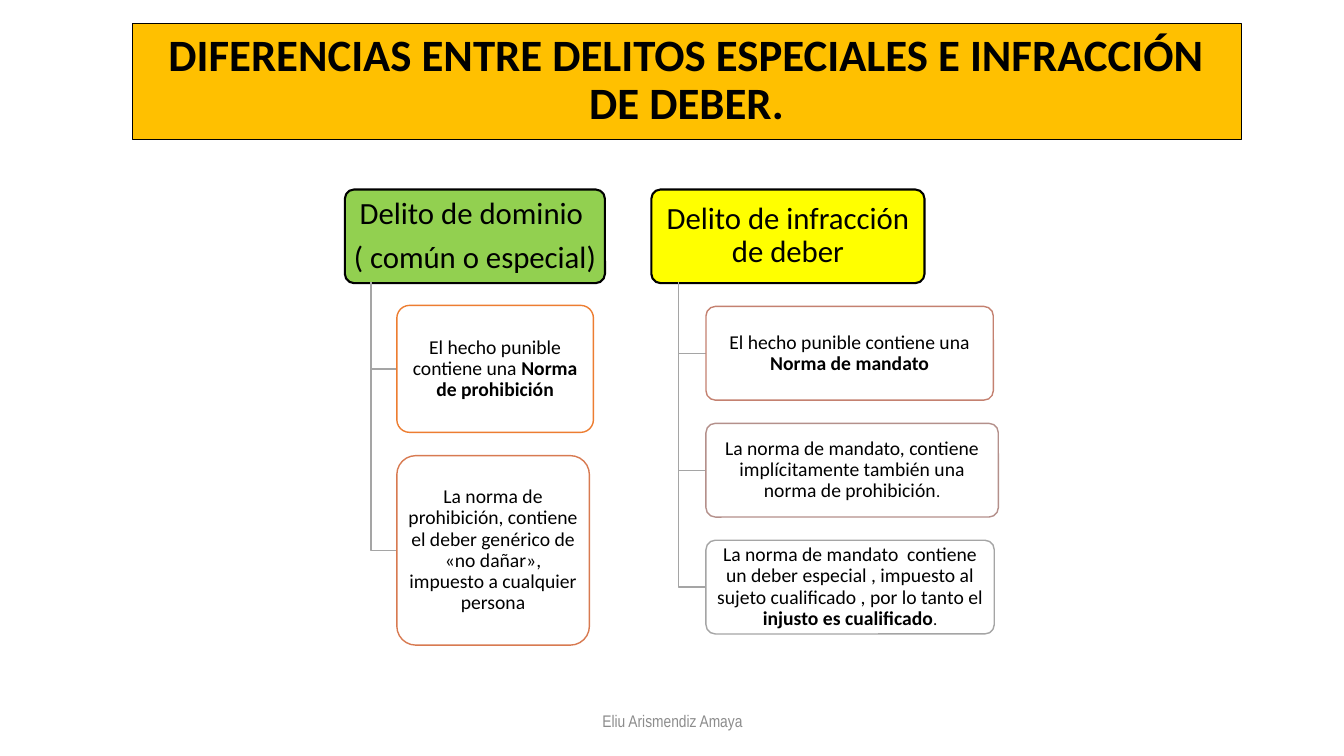
from dataclasses import dataclass

from lxml.etree import SubElement
from pptx import Presentation
from pptx.dml.color import RGBColor as Rgb
from pptx.enum.shapes import MSO_SHAPE as Shape
from pptx.enum.text import MSO_ANCHOR as Anchor, MSO_AUTO_SIZE as Fit, PP_ALIGN as Align
from pptx.oxml.ns import qn
from pptx.util import Inches, Pt


@dataclass(frozen=True)
class Theme:
    font: str = "Calibri"
    narrow: str = "Arial Narrow"
    ink: str = "000000"
    white: str = "FFFFFF"
    grey: str = "A5A5A5"
    muted: str = "8C8C8C"
    amber: str = "FFC000"
    green: str = "92D050"
    yellow: str = "FFFF00"
    orange: str = "ED7D31"
    coral: str = "D87A51"
    rose: str = "C48170"
    mauve: str = "B4908B"
    title: int = 32
    head: int = 22
    body: int = 14
    small: int = 12


THEME = Theme()
BOLD = {"bold": True}
DOT = (".", {"size": THEME.small})


def write(frame, paras, size, font=THEME.font, color=THEME.ink, bold=False,
          lead=0.9, after=0.0, pad=None):
    """Fill a frame; each paragraph is a list of (text, overrides) runs."""
    frame.word_wrap = True
    frame.auto_size = Fit.NONE
    frame.vertical_anchor = Anchor.MIDDLE
    if pad:
        frame.margin_left = frame.margin_right = Inches(pad[0])
        frame.margin_top = frame.margin_bottom = Inches(pad[1])
    for i, runs in enumerate(paras):
        para = frame.add_paragraph() if i else frame.paragraphs[0]
        para.alignment = Align.CENTER
        para.line_spacing = lead
        para.space_before = Pt(0)
        para.space_after = Pt(after * size)
        for text, own in runs:
            run = para.add_run()
            run.text = text
            run.font.name = font
            run.font.size = Pt(own.get("size", size))
            run.font.bold = own.get("bold", bold)
            run.font.color.rgb = Rgb.from_string(color)


class Deck:
    gap = 0.23
    top = 1.88
    base = 2.8

    def __init__(self, theme):
        self.theme = theme
        self.prs = Presentation()
        self.prs.slide_width = Inches(13.33)
        self.prs.slide_height = Inches(7.5)
        self.slide = self.prs.slides.add_slide(self.prs.slide_layouts[5])

    def paint(self, shape, fill, line, width):
        shape.fill.solid()
        shape.fill.fore_color.rgb = Rgb.from_string(fill)
        shape.line.color.rgb = Rgb.from_string(line)
        shape.line.width = Pt(width)

    def title(self, text, x, y, w, h):
        box = self.slide.shapes.title
        box.left, box.top, box.width, box.height = map(Inches, (x, y, w, h))
        self.paint(box, self.theme.amber, self.theme.ink, 0.5)
        write(box.text_frame, [[(text, BOLD)]], self.theme.title)

    def label(self, text, x, y, w, h):
        box = self.slide.shapes.add_textbox(*map(Inches, (x, y, w, h)))
        write(box.text_frame, [[(text, {})]], self.theme.small,
              font=self.theme.narrow, color=self.theme.muted, lead=1.0)

    def card(self, paras, x, y, w, h, fill, line, width, size, pad):
        box = self.slide.shapes.add_shape(
            Shape.ROUNDED_RECTANGLE, *map(Inches, (x, y, w, h)))
        box.adjustments[0] = 0.1
        box.shadow.inherit = False
        self.paint(box, fill, line, width)
        write(box.text_frame, paras, size, after=0.35, pad=pad)
        return box

    def elbow(self, x, y, right, low):
        """Draw a line down from (x, y) and then right."""
        pen = self.slide.shapes.build_freeform(Inches(x), Inches(y))
        pen.add_line_segments([(Inches(x), Inches(low)),
                               (Inches(right), Inches(low))], close=False)
        path = pen.convert_to_shape()
        path.shadow.inherit = False
        path.fill.background()
        path.line.color.rgb = Rgb.from_string(self.theme.grey)
        path.line.width = Pt(1)

    def branch(self, head, x, w, fill, high, cards):
        """Draw a heading and its cards, each (width, height, line, runs)."""
        look = self.theme
        self.card(head, x, self.top, w, 0.93, fill, look.ink, 1.5,
                  look.head, (0.05, 0.03))
        spine, left = x + 0.1 * w, x + 0.2 * w
        y = high
        for wide, tall, line, runs in cards:
            self.elbow(spine, self.base, left, y + tall / 2)
            box = self.card([runs], left, y, wide, tall, look.white, line, 1,
                            look.body, (0.03, 0.02))
            tint = box.fill._xPr.find(qn("a:solidFill"))[0]
            SubElement(tint, qn("a:alpha"), val="90000")
            y += tall + self.gap


def main():
    deck = Deck(THEME)
    deck.title("DIFERENCIAS ENTRE DELITOS ESPECIALES E INFRACCIÓN DE DEBER.",
               1.31, 0.23, 11, 1.15)
    deck.label("Eliu Arismendiz Amaya", 4.42, 6.95, 4.5, 0.4)
    deck.branch(
        [[("Delito de dominio ", {})], [("( común o especial) ", {})]],
        3.42, 2.58, THEME.green, 3.03, [
            (1.95, 1.26, THEME.orange, [
                ("El hecho punible contiene una ", {}),
                ("Norma de prohibición", BOLD)]),
            (1.91, 1.88, THEME.coral, [
                ("La norma de prohibición, contiene el deber genérico de "
                 "«no dañar», impuesto a cualquier persona", {})]),
        ])
    deck.branch(
        [[("Delito de infracción de deber", {})]],
        6.46, 2.71, THEME.yellow, 3.04, [
            (2.85, 0.93, THEME.rose, [
                ("El hecho punible contiene una ", {}),
                ("Norma de mandato", BOLD)]),
            (2.9, 0.93, THEME.mauve, [
                ("La norma de mandato, contiene implícitamente también una "
                 "norma de prohibición", {}), DOT]),
            (2.86, 0.93, THEME.grey, [
                ("La norma de mandato  contiene un deber especial , impuesto "
                 "al sujeto cualificado , por lo tanto el ", {}),
                ("injusto es cualificado", BOLD), DOT]),
        ])
    deck.prs.save("out.pptx")


if __name__ == "__main__":
    main()
